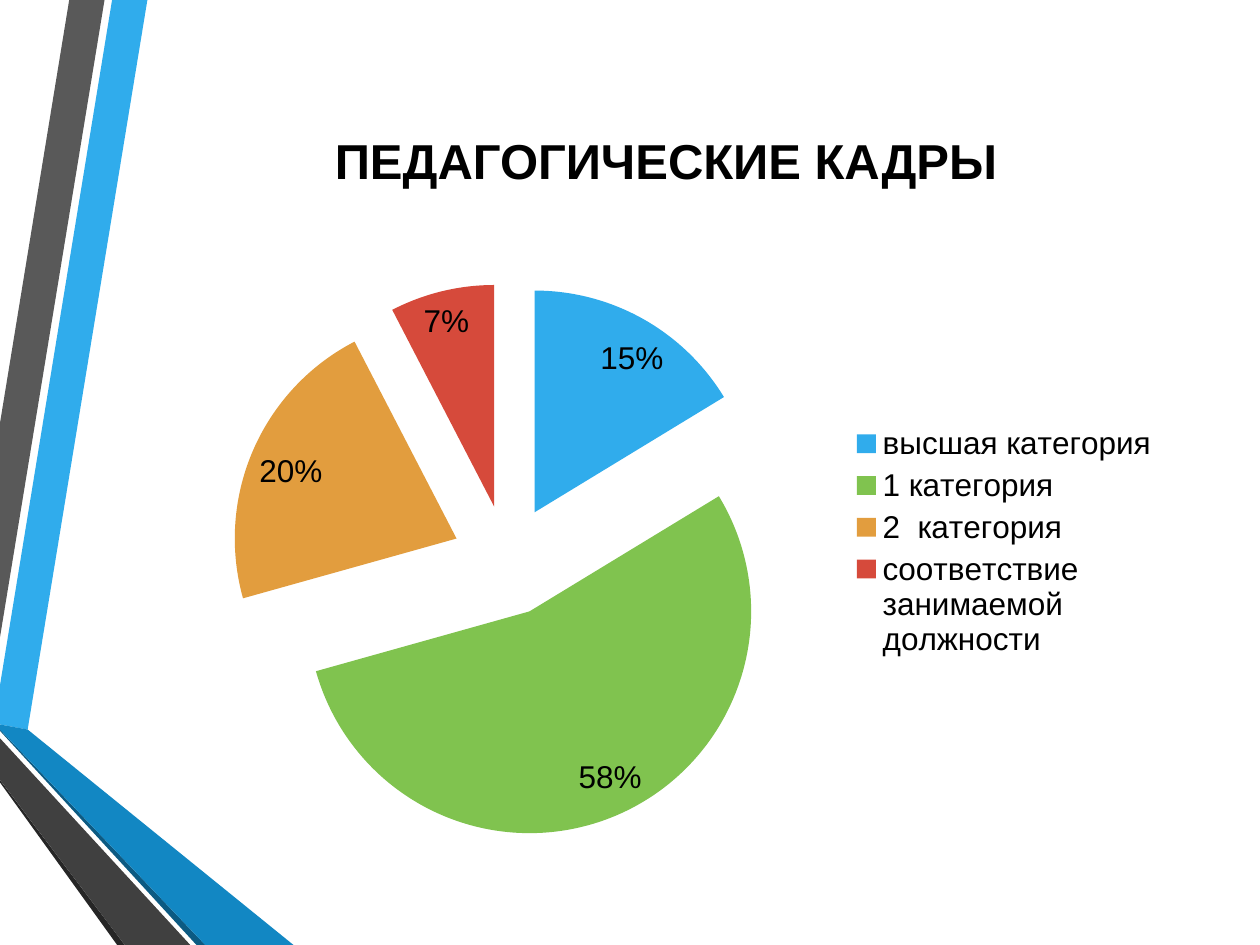
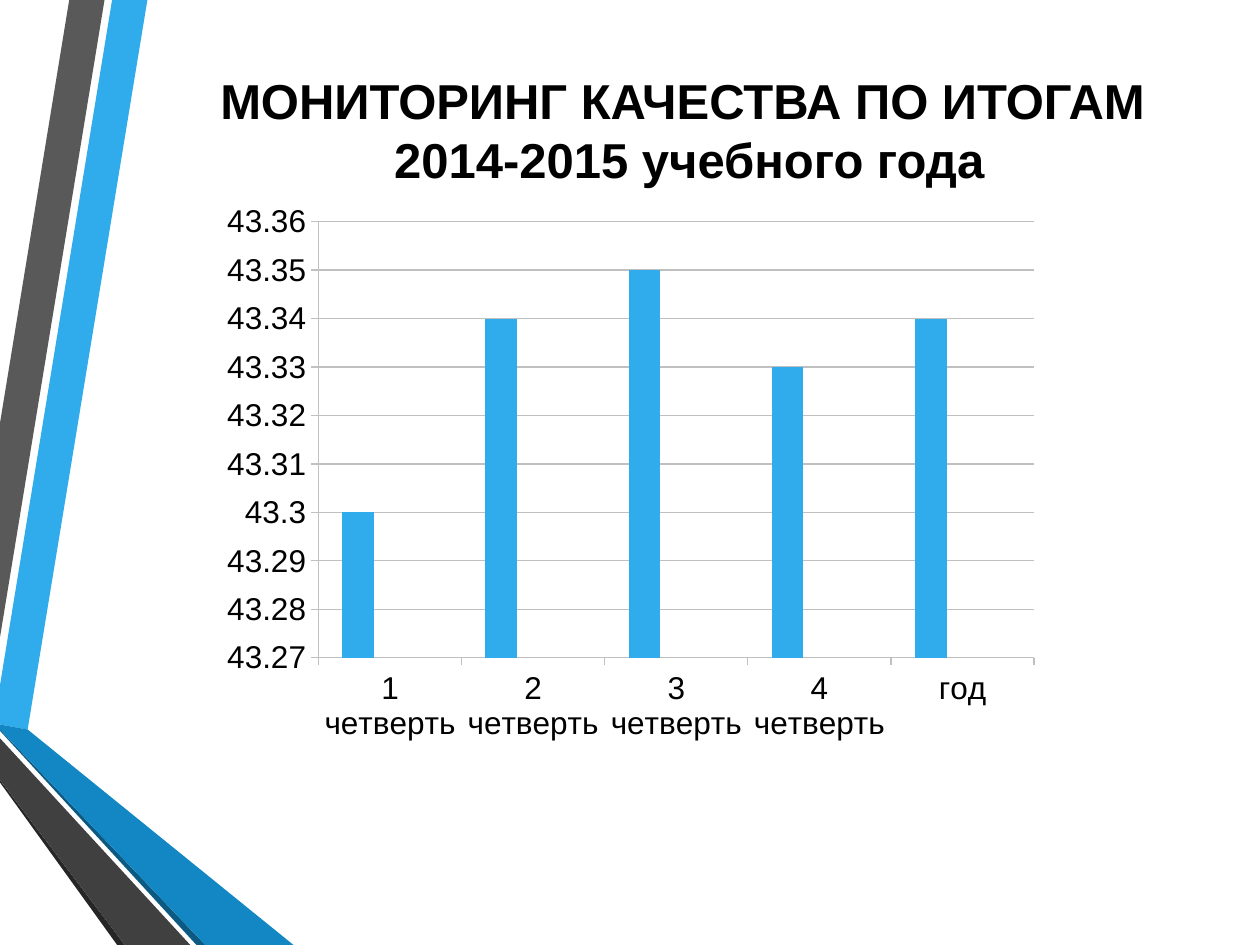
from pptx import Presentation
from pptx.chart.data import CategoryChartData
from pptx.dml.color import RGBColor
from pptx.enum.chart import XL_CHART_TYPE as ChartType
from pptx.enum.chart import XL_LABEL_POSITION as LabelPosition
from pptx.enum.chart import XL_LEGEND_POSITION as LegendPosition
from pptx.enum.chart import XL_TICK_MARK as TickMark
from pptx.enum.text import MSO_ANCHOR, PP_ALIGN
from pptx.oxml import parse_xml
from pptx.oxml.ns import nsdecls
from pptx.util import Inches, Pt

BLACK = RGBColor(0x00, 0x00, 0x00)
AXIS_GRAY = RGBColor(0xC0, 0xC0, 0xC0)
BLUE = RGBColor(0x30, 0xAC, 0xEC)
GREEN = RGBColor(0x80, 0xC3, 0x4F)
ORANGE = RGBColor(0xE2, 0x9D, 0x3E)
RED = RGBColor(0xD6, 0x4A, 0x3B)
MID_BLUE = RGBColor(0x12, 0x87, 0xC3)
DEEP_BLUE = RGBColor(0x0C, 0x5A, 0x82)
LIGHT_GRAPHITE = RGBColor(0x59, 0x59, 0x59)
GRAPHITE = RGBColor(0x40, 0x40, 0x40)
DARK_GRAPHITE = RGBColor(0x26, 0x26, 0x26)

ACCENTS = [BLUE, GREEN, ORANGE, RED]
BANDS = [
    (BLUE, [(0, 5.44), (0, 5.75), (0.22, 5.79), (1.17, 0), (0.89, 0)]),
    (LIGHT_GRAPHITE, [(0.83, 0), (0.55, 0), (0, 3.36), (0, 5.06)]),
    (DARK_GRAPHITE, [(0, 6.19), (0, 6.21), (0.93, 7.5), (0.99, 7.5)]),
    (DEEP_BLUE, [(0, 5.79), (0, 5.8), (1.56, 7.5), (1.63, 7.5)]),
    (MID_BLUE, [(0, 5.79), (1.63, 7.5), (2.33, 7.5), (0.22, 5.79), (0, 5.75)]),
    (GRAPHITE, [(0, 6.19), (0.99, 7.5), (1.51, 7.5), (0, 5.86)]),
]


class Deck:
    font_name = "Arial"
    title_size = Pt(28)
    chart_size = Pt(18)

    def __init__(self):
        self.presentation = Presentation()
        self.presentation.slide_width = Inches(10)
        self.presentation.slide_height = Inches(7.5)
        self.slide = None

    def add_slide(self):
        self.slide = self.presentation.slides.add_slide(self.presentation.slide_layouts[6])
        for color, points in BANDS:
            self.add_band(color, points)

    def add_band(self, color, points):
        vertices = [(Inches(x), Inches(y)) for x, y in points]
        builder = self.slide.shapes.build_freeform(*vertices[0])
        builder.add_line_segments(vertices[1:], close=True)
        shape = builder.convert_to_shape()
        shape.shadow.inherit = False
        shape.fill.solid()
        shape.fill.fore_color.rgb = color
        shape.line.fill.background()

    def set_font(self, font, size, bold=False):
        font.name = self.font_name
        font.size = size
        font.bold = bold
        font.color.rgb = BLACK

    def add_title(self, text, left, top, width, height):
        shape = self.slide.shapes.add_textbox(
            Inches(left), Inches(top), Inches(width), Inches(height))
        frame = shape.text_frame
        frame.word_wrap = True
        frame.vertical_anchor = MSO_ANCHOR.MIDDLE
        paragraph = frame.paragraphs[0]
        paragraph.text = text
        paragraph.alignment = PP_ALIGN.CENTER
        self.set_font(paragraph.font, self.title_size, bold=True)

    def add_chart(self, chart_type, categories, series, left, top, width, height):
        data = CategoryChartData()
        data.categories = categories
        for name, values in series:
            data.add_series(name, values)
        chart = self.slide.shapes.add_chart(
            chart_type, Inches(left), Inches(top), Inches(width), Inches(height), data).chart
        chart.has_title = False
        chart.has_legend = False
        self.set_font(chart.font, self.chart_size)
        return chart

    def set_plot_area(self, chart, **fractions):
        for layout in chart._chartSpace.findall(".//{*}plotArea/{*}layout"):
            layout.getparent().remove(layout)
        sizes = "".join(f'<c:{key} val="{value}"/>' for key, value in fractions.items())
        layout = parse_xml(
            f'<c:layout {nsdecls("c")}><c:manualLayout><c:layoutTarget val="inner"/>'
            f'<c:xMode val="edge"/><c:yMode val="edge"/>{sizes}</c:manualLayout></c:layout>')
        chart._chartSpace.find(".//{*}plotArea").insert(0, layout)

    def add_pie(self, categories, values, custom_labels, *box):
        chart = self.add_chart(ChartType.PIE, categories, [("Series 1", values)], *box)
        self.set_plot_area(chart, x=0.07, y=0.09, w=0.55, h=0.88)
        chart.has_legend = True
        chart.legend.position = LegendPosition.RIGHT
        chart.legend.include_in_layout = False
        plot = chart.plots[0]
        plot.vary_by_categories = True
        series = plot.series[0]
        labels = series.data_labels
        labels.show_value = True
        labels.show_percentage = False
        labels.number_format = "0%"
        labels.number_format_is_linked = False
        labels.position = LabelPosition.BEST_FIT
        self.set_font(labels.font, self.chart_size)
        for index, color in enumerate(ACCENTS):
            fill = series.points[index].format.fill
            fill.solid()
            fill.fore_color.rgb = color
        explosion = parse_xml(f'<c:explosion {nsdecls("c")} val="25"/>')
        series._element.find(".//{*}dPt").addprevious(explosion)
        for index, text in custom_labels.items():
            label = series.points[index].data_label
            label.text_frame.text = text
            self.set_font(label.text_frame.paragraphs[0].font, self.chart_size)
            label.position = LabelPosition.BEST_FIT

    def add_columns(self, categories, series, scale, *box):
        chart = self.add_chart(ChartType.COLUMN_CLUSTERED, categories, series, *box)
        plot = chart.plots[0]
        plot.vary_by_categories = False
        plot.gap_width = 150
        for column_series, color in zip(plot.series, ACCENTS):
            column_series.format.fill.solid()
            column_series.format.fill.fore_color.rgb = color
        value_axis = chart.value_axis
        value_axis.minimum_scale, value_axis.maximum_scale, value_axis.major_unit = scale
        value_axis.has_major_gridlines = True
        value_axis.tick_labels.number_format = "General"
        value_axis.tick_labels.number_format_is_linked = False
        for axis in (chart.category_axis, value_axis):
            axis.major_tick_mark = TickMark.OUTSIDE
            self.set_font(axis.tick_labels.font, self.chart_size)
        for lines in (chart.category_axis, value_axis, value_axis.major_gridlines):
            lines.format.line.color.rgb = AXIS_GRAY
            lines.format.line.width = Pt(0.75)


def main():
    deck = Deck()

    deck.add_slide()
    deck.add_title("ПЕДАГОГИЧЕСКИЕ КАДРЫ", 0.77, 0.36, 9.03, 1.82)
    deck.add_pie(
        ["высшая категория", "1 категория", "2  категория", "соответствие занимаемой должности"],
        [0.15, 0.5, 0.2, 0.07], {1: "58%"}, 1.25, 1.8, 8.05, 5)

    deck.add_slide()
    deck.add_title("МОНИТОРИНГ КАЧЕСТВА ПО ИТОГАМ \v2014-2015 учебного года",
                   1.14, 0.36, 8.66, 1.34)
    quarters = [f"{number} четверть" for number in range(1, 5)]
    deck.add_columns(
        quarters + ["год"],
        [("Series 1", [43.3, 43.34, 43.35, 43.33, 43.34]),
         ("Series 2", [None] * 5),
         ("Series 3", [None] * 5)],
        (43.27, 43.36, 0.01), 1.67, 1.53, 6.67, 4.44)

    deck.presentation.save("out.pptx")


if __name__ == "__main__":
    main()
